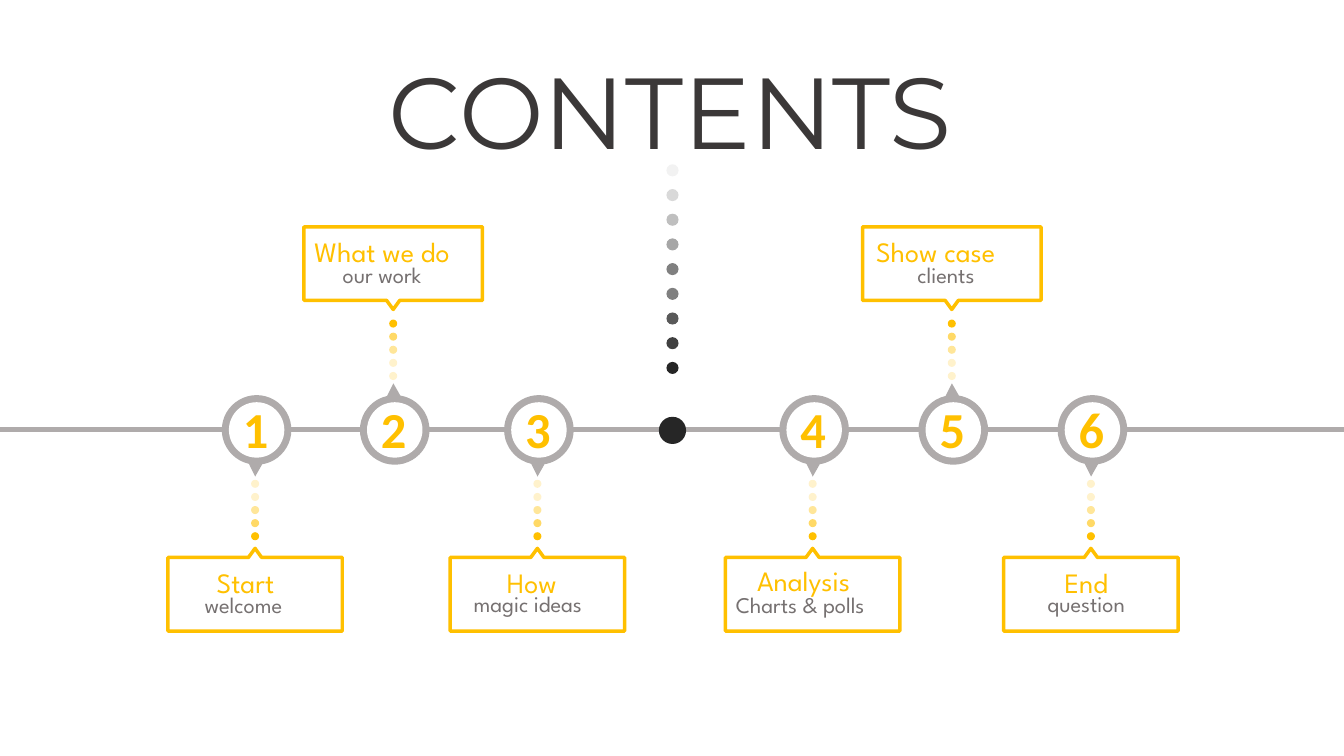
import pptx
import pptx.util
import pptx.dml.color
import pptx.enum.shapes
import pptx.enum.text
import lxml.etree
from pptx.util import Inches

COLOURS = {
    "ink": "3B3838",
    "black": "262626",
    "rail": "AFABAB",
    "grey": "767171",
    "gold": "FFC000",
    "white": "FFFFFF",
}
GOLD_FADE = ["FFF2CC", "FFF2CC", "FFE699", "FFD966", COLOURS["gold"]]
GREY_FADE = ["F2F2F2", "D9D9D9", "BFBFBF", "A6A6A6", "808080",
             "808080", "595959", "404040", COLOURS["black"]]
SHAPES = pptx.enum.shapes.MSO_SHAPE
AXIS = 4.265
CENTRE = 6.67
UP, DOWN = -1, 1


class Timeline:
    heading_font = "Montserrat"
    label_font = "League Spartan"
    number_font = "Calibri"

    def __init__(self, deck):
        self.page = deck.slides.add_slide(deck.slide_layouts[5])
        self.shapes = self.page.shapes

    def colour(self, value):
        return pptx.dml.color.RGBColor.from_string(value)

    def format_text(self, box, wording, size, font, colour, bold=False, wrap=False):
        frame = box.text_frame
        frame.text = wording
        frame.word_wrap = wrap
        frame.vertical_anchor = pptx.enum.text.MSO_ANCHOR.TOP
        frame.auto_size = pptx.enum.text.MSO_AUTO_SIZE.SHAPE_TO_FIT_TEXT
        span = frame.paragraphs[0].runs[0]
        span.font.size = pptx.util.Pt(size)
        span.font.name = font
        span.font.bold = bold
        span.font.color.rgb = self.colour(colour)

    def title(self, wording):
        box = self.shapes.title
        box.left, box.top = Inches(3.43), Inches(0.43)
        box.width, box.height = Inches(6.43), Inches(1.31)
        self.format_text(box, wording, 72, self.heading_font, COLOURS["ink"])
        box.text_frame.paragraphs[0].alignment = pptx.enum.text.PP_ALIGN.CENTER

    def text(self, left, top, width, height, wording, *style, **options):
        box = self.shapes.add_textbox(Inches(left), Inches(top), Inches(width), Inches(height))
        self.format_text(box, wording, *style, **options)

    def rail(self):
        line = self.shapes.add_connector(
            pptx.enum.shapes.MSO_CONNECTOR.STRAIGHT,
            Inches(0), Inches(4.26), Inches(13.33), Inches(4.26))
        line.line.color.rgb = self.colour(COLOURS["rail"])
        line.line.width = pptx.util.Pt(4)
        lxml.etree.SubElement(line._element.spPr, pptx.oxml.ns.qn("a:effectLst"))

    def disc(self, x, y, size, colour, kind=SHAPES.OVAL):
        disc = self.shapes.add_shape(
            kind, Inches(x - size / 2), Inches(y - size / 2), Inches(size), Inches(size))
        disc.shadow.inherit = False
        disc.fill.solid()
        disc.fill.fore_color.rgb = self.colour(colour)
        disc.line.fill.background()
        return disc

    def dots(self, x, start, step, size, fade):
        for index, colour in enumerate(fade):
            self.disc(x, start + index * step, size, colour)

    def marker(self, x, number, side):
        ring = self.disc(x, AXIS, 0.69, COLOURS["rail"], SHAPES.OVAL_CALLOUT)
        ring.adjustments[0] = -0.02
        ring.adjustments[1] = side * 0.67
        self.disc(x, AXIS, 0.55, COLOURS["white"])
        self.text(x - 0.235, 3.9, 0.46, 0.71, str(number),
                  36, self.number_font, COLOURS["gold"], bold=True)

    def balloon(self, x, tip, side, width):
        left, right = x - width / 2, x + width / 2
        shoulder, far = tip + side * 0.09, tip + side * 0.82
        corners = [(left, far), (right, far), (right, shoulder), (x + 0.065, shoulder),
                   (x, tip), (x - 0.065, shoulder), (left, shoulder)]
        points = [(Inches(across), Inches(down)) for across, down in corners]
        builder = self.shapes.build_freeform(*points[0], scale=1.0)
        builder.add_line_segments(points[1:], close=True)
        outline = builder.convert_to_shape()
        outline.shadow.inherit = False
        outline.fill.background()
        outline.line.color.rgb = self.colour(COLOURS["gold"])
        outline.line.width = pptx.util.Pt(2.5)

    def milestone(self, number, x, side, heading, caption):
        first_dot, tip, width = (4.8, 5.44, 1.73) if side == DOWN else (3.73, 3.07, 1.77)
        self.dots(x, first_dot, side * 0.13, 0.08, GOLD_FADE)
        self.marker(x + 0.015, number, side)
        self.balloon(x, tip, side, width)
        self.text(*heading, 20, self.label_font, COLOURS["gold"])
        self.text(*caption, 16, self.label_font, COLOURS["grey"], wrap=True)


MILESTONES = [
    (2.53, DOWN, (2.05, 5.56, 0.88, 0.44, "Start"), (1.93, 5.82, 1.32, 0.37, "welcome")),
    (3.9, UP, (3.02, 2.28, 1.77, 0.44, "What we do"), (3.3, 2.54, 1.32, 0.37, "our work")),
    (5.33, DOWN, (4.93, 5.56, 0.88, 0.44, "How"), (4.6, 5.81, 1.71, 0.37, "magic ideas")),
    (8.06, DOWN, (7.41, 5.54, 1.41, 0.44, "Analysis"), (7.2, 5.82, 1.85, 0.37, "Charts & polls")),
    (9.44, UP, (8.59, 2.28, 1.68, 0.44, "Show case"), (9, 2.54, 1.32, 0.37, "clients")),
    (10.82, DOWN, (10.46, 5.56, 0.81, 0.44, "End"), (10.29, 5.81, 1.71, 0.37, "question")),
]


def main():
    deck = pptx.Presentation()
    deck.slide_width, deck.slide_height = Inches(13.33), Inches(7.5)
    timeline = Timeline(deck)
    timeline.title("CONTENTS")
    timeline.rail()
    timeline.dots(CENTRE, 1.69, 0.245, 0.12, GREY_FADE)
    timeline.disc(CENTRE, 4.27, 0.27, COLOURS["black"])
    for number, milestone in enumerate(MILESTONES, start=1):
        timeline.milestone(number, *milestone)
    deck.save("out.pptx")


if __name__ == "__main__":
    main()
